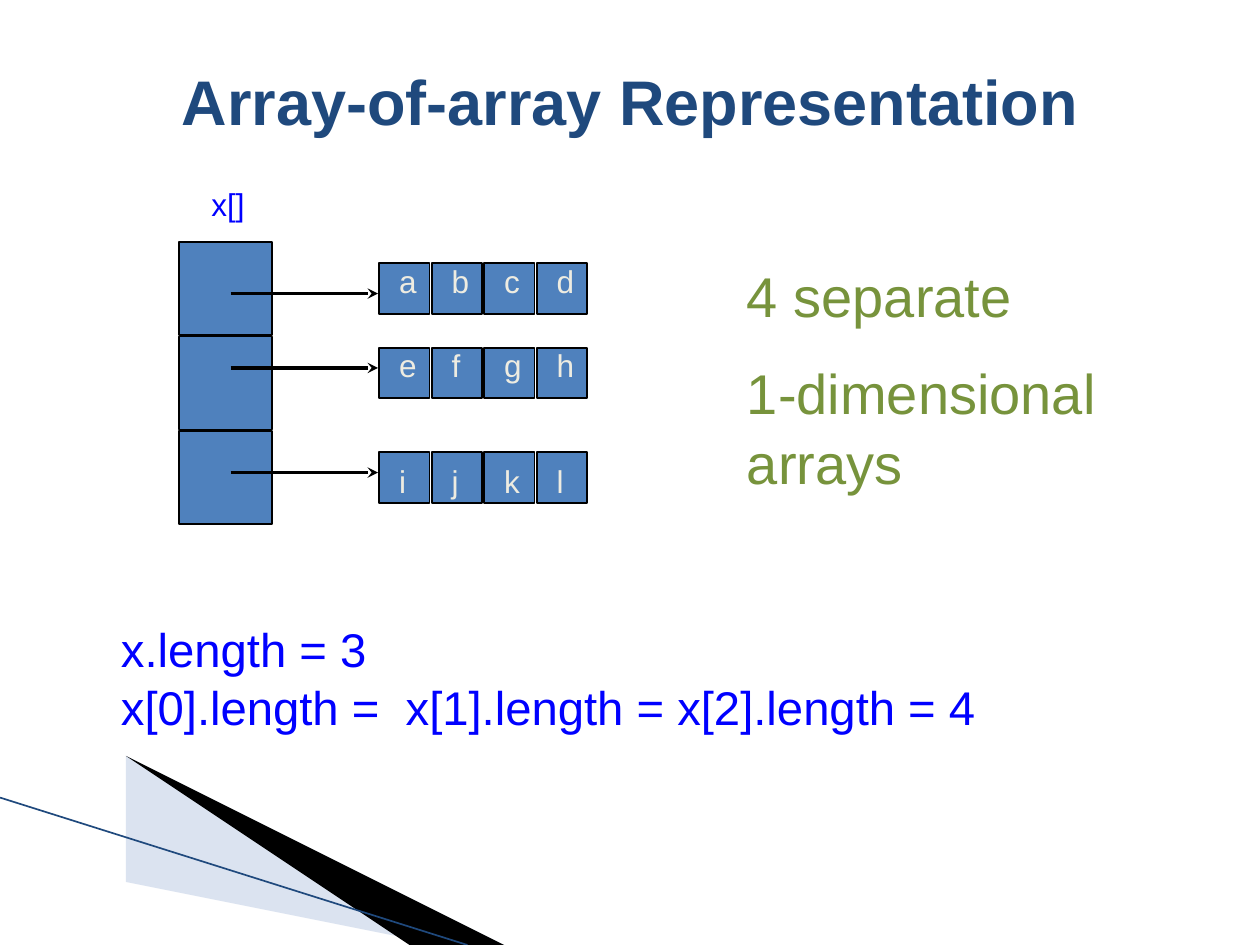
from lxml import etree
from pptx import Presentation
from pptx.dml.color import RGBColor
from pptx.enum.shapes import MSO_CONNECTOR, MSO_SHAPE
from pptx.enum.text import MSO_ANCHOR, PP_ALIGN
from pptx.oxml.ns import qn
from pptx.util import Inches, Pt

STRAIGHT = MSO_CONNECTOR.STRAIGHT
RECTANGLE = MSO_SHAPE.RECTANGLE
MIDDLE = MSO_ANCHOR.MIDDLE
CENTER = PP_ALIGN.CENTER

rgb = RGBColor.from_string

prs = Presentation()
prs.slide_width, prs.slide_height = Inches(10), Inches(7.5)
slide = prs.slides.add_slide(prs.slide_layouts[6])
shapes = slide.shapes


def add_text(lines, left, top, width, height, size, color):
    frame = shapes.add_textbox(
        Inches(left), Inches(top), Inches(width), Inches(height)).text_frame
    frame.word_wrap = True
    frame.text = "\n".join(lines)
    for paragraph in frame.paragraphs:
        paragraph.font.name = "Arial"
        paragraph.font.size = Pt(size)
        paragraph.font.color.rgb = rgb(color)
    return frame


def add_line(x1, y1, x2, y2, color, width):
    """Draw a straight line without shadow and return its a:ln element."""
    line = shapes.add_connector(
        STRAIGHT, Inches(x1), Inches(y1), Inches(x2), Inches(y2))
    line.line.color.rgb = rgb(color)
    line.line.width = Pt(width)
    properties = line._element.spPr
    etree.SubElement(properties, qn("a:effectLst"))
    return properties.find(qn("a:ln"))


# Corner wedges, in inches
wedges = [
    ("A7B9DB", 40, [(0.55, 6.51), (5.95, 7.5), (4.56, 7.5), (0.55, 6.5)]),
    ("000000", 100, [(0.53, 6.49), (4.57, 7.5), (3.72, 7.5), (0.54, 6.5)]),
]
for color, opacity, corners in wedges:
    outline = shapes.build_freeform(*corners[0], scale=Inches(1))
    outline.add_line_segments(corners[1:], close=True)
    wedge = outline.convert_to_shape()
    wedge.shadow.inherit = False
    wedge.fill.solid()
    wedge.fill.fore_color.rgb = rgb(color)
    wedge.line.fill.background()
    if opacity < 100:
        fill_color = wedge._element.spPr.find(qn("a:solidFill"))[0]
        etree.SubElement(fill_color, qn("a:alpha"), val=str(opacity * 1000))
add_line(0, 6.33, 3.71, 7.5, "1F497D", 0.95)

title = add_text(["Array-of-array Representation"], 0.25, 0.17, 9.5, 1.25, 36, "1F497D")
title.vertical_anchor = MIDDLE
title.paragraphs[0].alignment = CENTER
title.paragraphs[0].font.bold = True

lengths = add_text(
    ["x.length = 3", "x[0].length =  x[1].length = x[2].length = 4"],
    0.75, 4.92, 8.5, 1.25, 27, "0000FF")
lengths.margin_left = Inches(0.21)
for paragraph in lengths.paragraphs:
    paragraph.line_spacing = 0.9
lengths.paragraphs[1].space_before = Pt(4)

# The outer array has three tall cells; each points to a row of four small ones
outer_left, outer_top, outer_pitch, outer_size = 1.42, 1.92, 0.75, 0.74
inner_left, inner_pitch, inner_size = 3.01, 10 / 24, 0.4
rows = [  # letters, cell top, letter top, arrow height
    ("abcd", 2.09, 2.03, 2.33),
    ("efgh", 2.76, 2.70, 2.92),
    ("ijkl", 3.59, 3.62, 3.75),
]
cells = [(outer_left, outer_top + i * outer_pitch, outer_size)
         for i in range(len(rows))]
cells += [(inner_left + i * inner_pitch, top, inner_size)
          for letters, top, _, _ in rows for i in range(len(letters))]
for left, top, size in cells:
    cell = shapes.add_shape(
        RECTANGLE, Inches(left), Inches(top), Inches(size), Inches(size))
    cell.shadow.inherit = False
    cell.fill.solid()
    cell.fill.fore_color.rgb = rgb("4F81BD")
    cell.line.color.rgb = rgb("000000")
    cell.line.width = Pt(1)

for letters, _, letter_top, arrow_y in rows:
    arrow = add_line(1.83, arrow_y, 3, arrow_y, "000000", 2)
    etree.SubElement(arrow, qn("a:tailEnd"), type="stealth")
    for i, letter in enumerate(letters):
        label = add_text([letter], inner_left + i * inner_pitch + 0.06,
                         letter_top, 0.34, 0.43, 18, "EEECE1")
        label.margin_right = 0

add_text(["x[]"], 1.58, 1.42, 0.83, 0.43, 18, "0000FF")

remark = add_text(["4 separate", "1-dimensional arrays"], 5.83, 2, 3.18, 1.99, 32, "77933C")
for paragraph in remark.paragraphs:
    paragraph.line_spacing = 1.05
remark.paragraphs[1].space_before = Pt(15)

prs.save("out.pptx")
